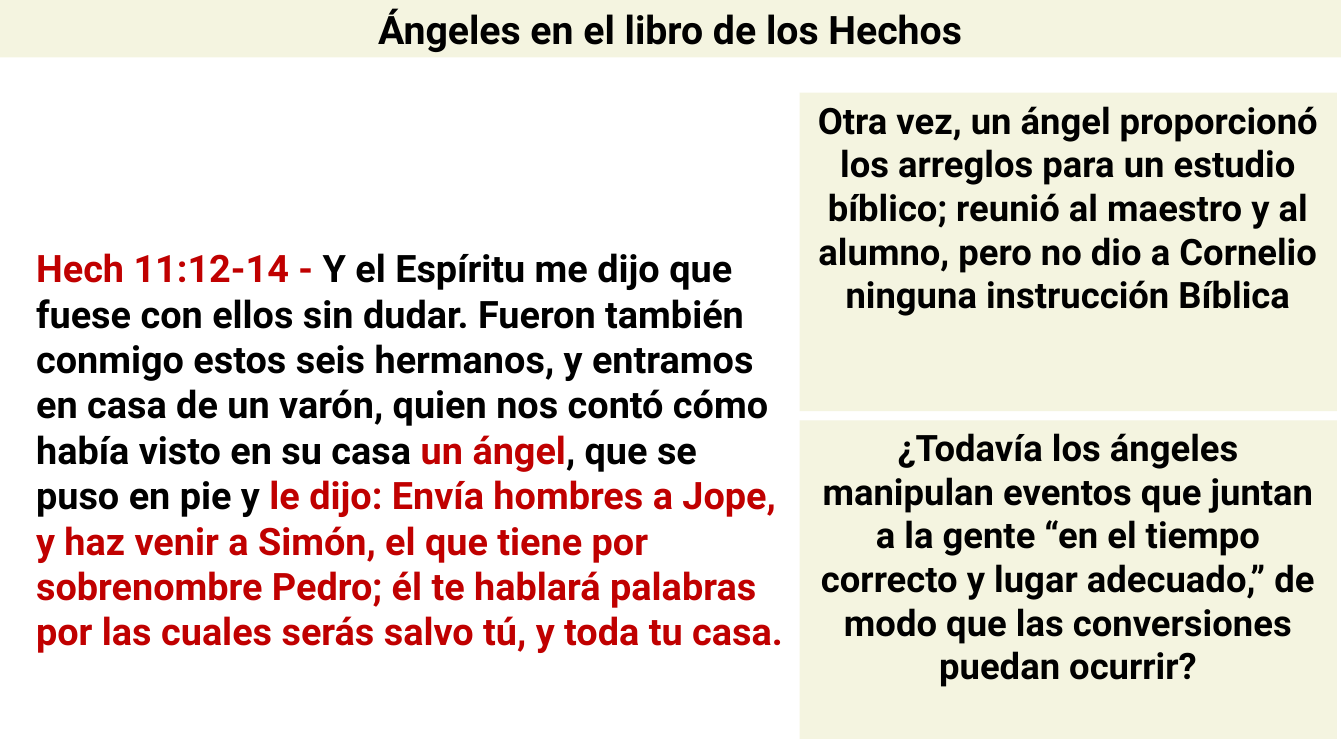
from dataclasses import dataclass

from pptx import Presentation
from pptx import util as u
from pptx.dml.color import RGBColor
from pptx.enum import shapes, text


@dataclass(frozen=True)
class Theme:
    font: str = "Roboto"
    panel: str = "F4F4E0"
    ink: str = "000000"
    accent: str = "C00000"
    title_size: int = 28
    verse_size: int = 27
    panel_size: int = 26


class Deck:
    def __init__(self, prs, theme):
        self.theme = theme
        self.s = prs.slides.add_slide(prs.slide_layouts[6])

    def set_text(self, sp, runs, size, align):
        """Fill a shape with one paragraph made of (text, colour) runs."""
        tf = sp.text_frame
        frame_format = {
            "word_wrap": True,
            "auto_size": text.MSO_AUTO_SIZE.NONE,
            "vertical_anchor": text.MSO_ANCHOR.TOP,
        }
        for name, value in frame_format.items():
            setattr(tf, name, value)
        p = tf.paragraphs[0]
        p.alignment = align
        font_format = {"name": self.theme.font, "size": u.Pt(size), "bold": True}
        for words, color in runs:
            r = p.add_run()
            r.text = words
            for name, value in font_format.items():
                setattr(r.font, name, value)
            r.font.color.rgb = RGBColor.from_string(color)

    def panel(self, box, words, size):
        sp = self.s.shapes.add_shape(
            shapes.MSO_SHAPE.RECTANGLE, *map(u.Inches, box))
        sp.shadow.inherit = False
        sp.fill.solid()
        sp.fill.fore_color.rgb = RGBColor.from_string(self.theme.panel)
        sp.line.fill.background()
        self.set_text(sp, [(words, self.theme.ink)], size, text.PP_ALIGN.CENTER)

    def passage(self, box, runs):
        sp = self.s.shapes.add_textbox(*map(u.Inches, box))
        self.set_text(sp, runs, self.theme.verse_size, text.PP_ALIGN.LEFT)


COMMENTS = [
    "Otra vez, un ángel proporcionó los arreglos para un estudio bíblico; "
    "reunió al maestro y al alumno, pero no dio a Cornelio ninguna "
    "instrucción Bíblica",
    "¿Todavía los ángeles manipulan eventos que juntan a la gente “en el "
    "tiempo correcto y lugar adecuado,” de modo que las conversiones puedan "
    "ocurrir?",
]


def main():
    prs = Presentation()
    prs.slide_width, prs.slide_height = u.Inches(13.33), u.Inches(7.5)
    theme = Theme()
    deck = Deck(prs, theme)

    deck.panel((-0.01, 0, 13.31, 0.57),
               "Ángeles en el libro de los Hechos", theme.title_size)
    deck.passage((0.26, 2.38, 7.67, 4.64), [
        ("Hech 11:12-14 - ", theme.accent),
        ("Y el Espíritu me dijo que fuese con ellos sin dudar. Fueron también "
         "conmigo estos seis hermanos, y entramos en casa de un varón, quien "
         "nos contó cómo había visto en su casa ", theme.ink),
        ("un ángel", theme.accent),
        (", que se puso en pie y ", theme.ink),
        ("le dijo: Envía hombres a Jope, y haz venir a Simón, el que tiene "
         "por sobrenombre Pedro; él te hablará palabras por las cuales serás "
         "salvo tú, y toda tu casa.", theme.accent),
    ])

    top, height, gap = 0.92, 3.16, 0.09
    for i, comment in enumerate(COMMENTS):
        deck.panel((7.93, top + i * (height + gap), 5.33, height),
                   comment, theme.panel_size)

    prs.save("out.pptx")


if __name__ == "__main__":
    main()
